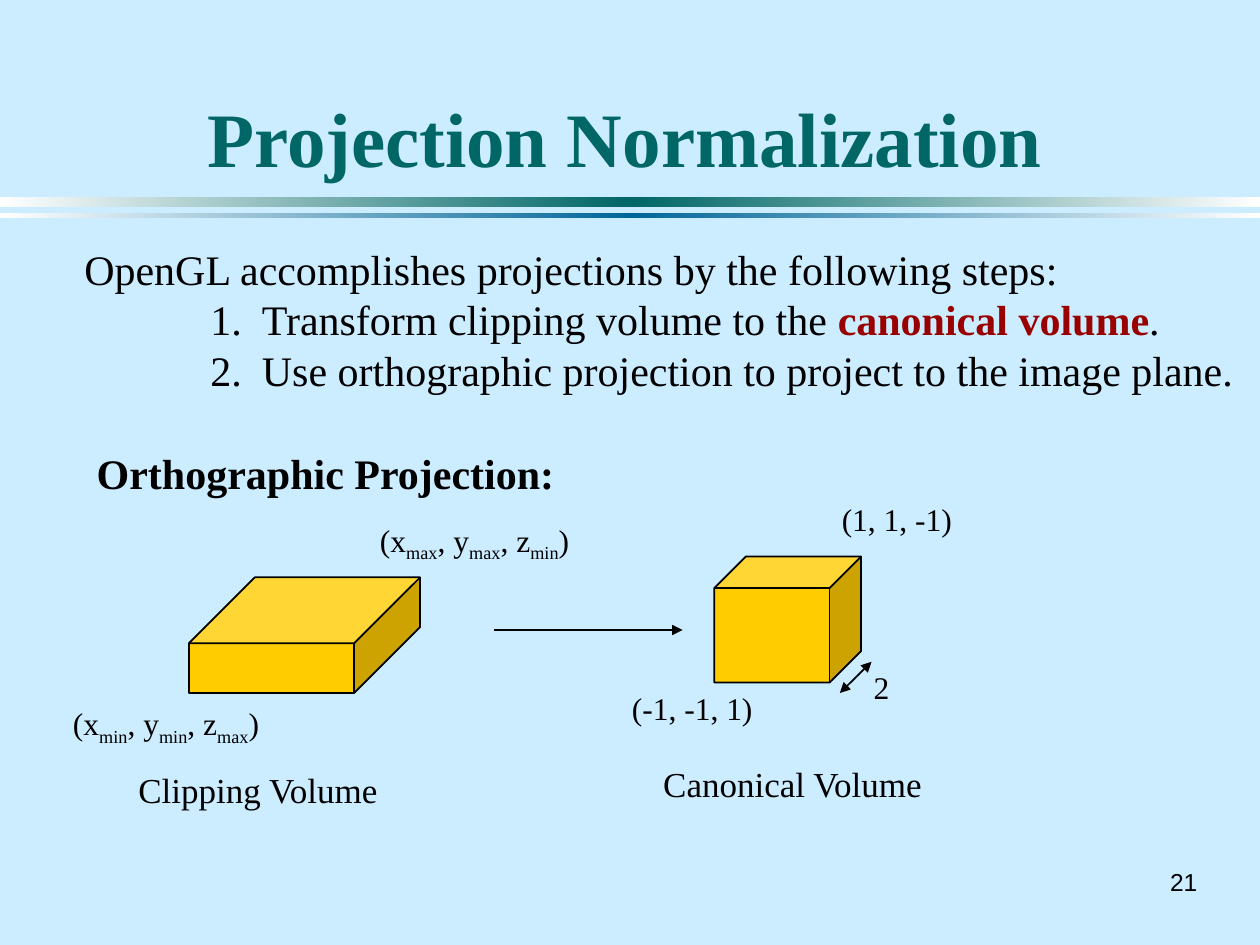
"""Build the Projection Normalization slide."""
from copy import deepcopy

from lxml.etree import SubElement
from pptx import Presentation
from pptx.dml.color import RGBColor
from pptx.enum.shapes import MSO_CONNECTOR as CONN, MSO_SHAPE as SHAPE
from pptx.enum.text import MSO_ANCHOR as ANCHOR, MSO_AUTO_SIZE as AUTO, PP_ALIGN as ALIGN
from pptx.oxml.ns import qn
from pptx.util import Cm, Pt

COLORS = {
    "background": "CCECFF",
    "title": "006666",
    "band": "006699",
    "fade": "FFFFFF",
    "text": "000000",
    "accent": "990000",
    "cube": "FFCC00",
}
SERIF = "Times New Roman"


def rgb(name):
    return RGBColor.from_string(COLORS[name])


def set_font(r, size, color="text", bold=False, name=SERIF):
    r.font.size = Pt(size)
    r.font.name = name
    r.font.bold = bold
    r.font.color.rgb = rgb(color)


def add_band(s, top, height, color):
    sp = s.shapes.add_shape(SHAPE.RECTANGLE, 0, Cm(top), Cm(25.4), Cm(height))
    sp.shadow.inherit = False
    sp.line.fill.background()
    sp.fill.gradient()
    sp.fill.gradient_angle = 0
    first = sp.fill.gradient_stops[0]._gs
    first.addnext(deepcopy(first))
    for stop, (position, name) in zip(sp.fill.gradient_stops, [(0, "fade"), (0.5, color), (1, "fade")]):
        stop.position = position
        stop.color.rgb = rgb(name)


def add_title(s, text):
    sp = s.shapes.title
    sp.left, sp.top, sp.width, sp.height = Cm(1.7), Cm(0.64), Cm(21.8), Cm(3.18)
    tf = sp.text_frame
    tf.text = text
    tf.auto_size = AUTO.NONE
    tf.vertical_anchor = ANCHOR.BOTTOM
    p = tf.paragraphs[0]
    p.alignment = ALIGN.CENTER
    set_font(p.runs[0], 44, "title", True)


def add_text(s, text, left, top, width, height, size, bold=False, name=SERIF, wrap=False):
    sp = s.shapes.add_textbox(Cm(left), Cm(top), Cm(width), Cm(height))
    tf = sp.text_frame
    tf.word_wrap = wrap
    tf.text = text
    for p in tf.paragraphs:
        for r in p.runs:
            set_font(r, size, bold=bold, name=name)
    return tf


def add_steps(s):
    tf = add_text(
        s,
        "OpenGL accomplishes projections by the following steps:\n"
        "1.\tTransform clipping volume to the \n"
        "2.\tUse orthographic projection to project to the image plane.",
        1.45, 4.78, 23.8, 3.3, 24, wrap=True)
    for p in tf.paragraphs[1:]:
        pPr = p._p.get_or_add_pPr()
        pPr.set("marL", str(Cm(3.58)))
        pPr.set("indent", str(Cm(-1.04)))
    for text, color, bold in [("canonical volume", "accent", True), (".", "text", False)]:
        r = tf.paragraphs[1].add_run()
        r.text = text
        set_font(r, 24, color, bold)


def add_corner(s, bounds, left, top, width):
    """Label a corner with x, y and z, each with its bound as a subscript."""
    tf = add_text(s, "(", left, top, width, 1.02, 18)
    p = tf.paragraphs[0]
    for axis, bound, after in zip("xyz", bounds, [", ", ", ", ")"]):
        for text, baseline in [(axis, "0"), (bound, "-25000"), (after, "0")]:
            r = p.add_run()
            r.text = text
            set_font(r, 18)
            r.font._element.set("baseline", baseline)
    return tf


def add_cube(s, left, top, width, height, depth):
    sp = s.shapes.add_shape(SHAPE.CUBE, Cm(left), Cm(top), Cm(width), Cm(height))
    sp.adjustments[0] = depth
    sp.shadow.inherit = False
    sp.fill.solid()
    sp.fill.fore_color.rgb = rgb("cube")
    sp.line.color.rgb = rgb("text")
    sp.line.width = Pt(1)


def add_arrow(s, x1, y1, x2, y2, ends):
    line = s.shapes.add_connector(CONN.STRAIGHT, Cm(x1), Cm(y1), Cm(x2), Cm(y2))
    line.line.color.rgb = rgb("text")
    line.line.width = Pt(1)
    ln = line.line._get_or_add_ln()
    for end in ends:
        SubElement(ln, qn(f"a:{end}"), type="triangle")
    SubElement(line._element.spPr, qn("a:effectLst"))


def main():
    prs = Presentation()
    prs.slide_width, prs.slide_height = Cm(25.4), Cm(19.05)
    s = prs.slides.add_slide(prs.slide_layouts[5])
    s.background.fill.solid()
    s.background.fill.fore_color.rgb = rgb("background")

    add_band(s, 3.97, 0.2, "title")
    add_band(s, 4.29, 0.1, "band")
    add_title(s, "Projection Normalization")
    add_steps(s)
    add_text(s, "Orthographic Projection:", 1.7, 8.89, 9.75, 1.27, 24, bold=True)

    add_cube(s, 3.81, 11.64, 4.66, 2.33, 0.57)
    add_cube(s, 14.4, 11.22, 2.96, 2.54, 0.25)
    add_arrow(s, 9.95, 12.7, 13.76, 12.7, ["tailEnd"])
    add_arrow(s, 16.93, 13.97, 17.57, 13.34, ["headEnd", "tailEnd"])

    add_corner(s, ["min", "min", "max"], 1.22, 14.07, 4.52)
    add_corner(s, ["max", "max", "min"], 7.41, 10.37, 5.28).word_wrap = True
    for text, left, top, width, height, size in [
        ("(-1, -1, 1)", 12.49, 13.76, 2.95, 1.02, 18),
        ("(1, 1, -1)", 16.72, 9.95, 2.74, 1.02, 18),
        ("2", 17.36, 13.34, 0.84, 1.02, 18),
        ("Clipping Volume", 2.54, 15.37, 5.44, 1.09, 20),
        ("Canonical Volume", 13.12, 15.24, 5.82, 1.09, 20),
    ]:
        add_text(s, text, left, top, width, height, size)

    tf = add_text(s, "21", 23.3, 17.36, 1.09, 0.84, 14, name="Arial")
    tf.vertical_anchor = ANCHOR.MIDDLE
    tf.paragraphs[0].alignment = ALIGN.RIGHT
    prs.save("out.pptx")


if __name__ == "__main__":
    main()
